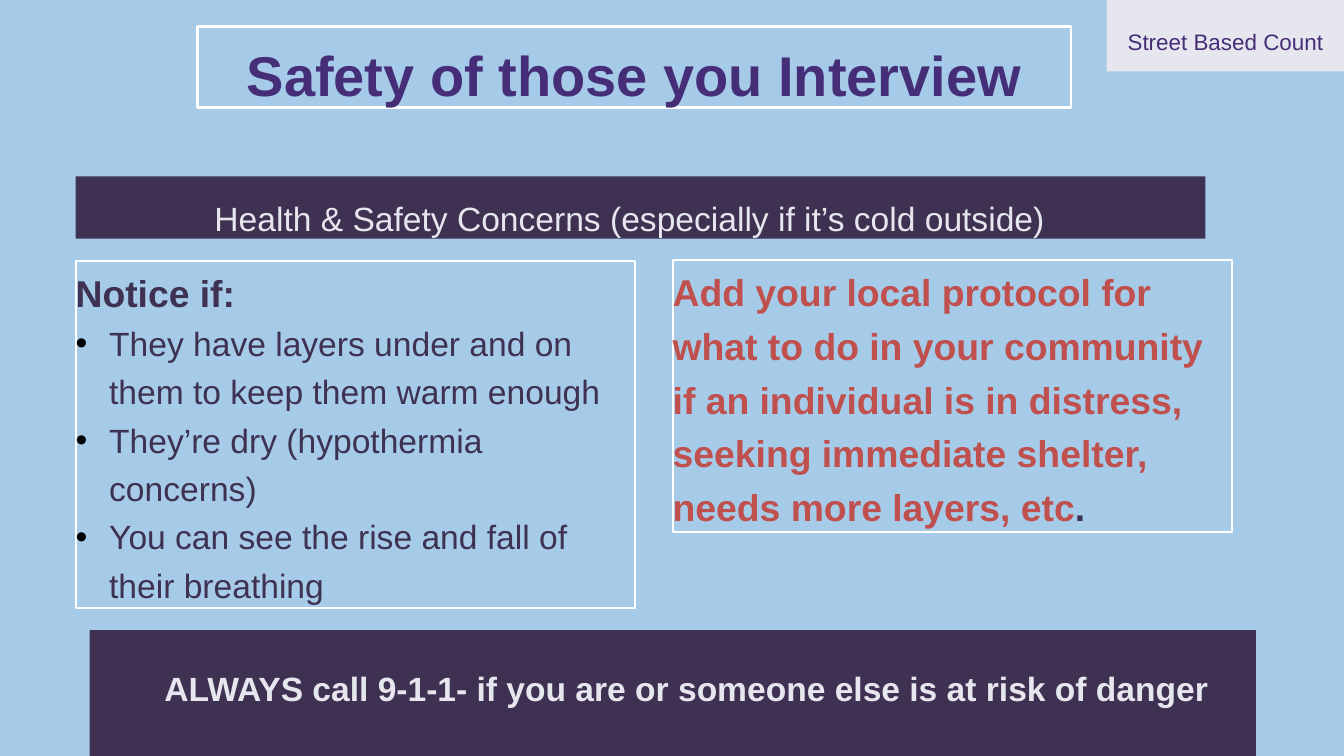
from lxml.etree import SubElement
from pptx import Presentation
from pptx.dml.color import RGBColor
from pptx.enum.shapes import MSO_SHAPE
from pptx.enum.text import MSO_ANCHOR, MSO_AUTO_SIZE, PP_ALIGN
from pptx.oxml.ns import qn
from pptx.util import Pt

PX = 9525  # EMU per px, 96 px to the inch
THEME = {
    "font": "Arial",
    "sky": RGBColor.from_string("A5CBE9"),
    "white": RGBColor.from_string("FFFFFF"),
    "violet": RGBColor.from_string("462D78"),
    "plum": RGBColor.from_string("3F3151"),
    "pale": RGBColor.from_string("E5E6EE"),
    "red": RGBColor.from_string("C0504D"),
    "title": Pt(60),
    "heading": Pt(40),
    "body": Pt(36),
    "tag": Pt(24),
}

presentation = Presentation()
presentation.slide_width = 1920 * PX
presentation.slide_height = 1080 * PX
slide = presentation.slides.add_slide(presentation.slide_layouts[6])
slide.background.fill.solid()
slide.background.fill.fore_color.rgb = THEME["sky"]


def add_box(bounds, fill=None, line_width=None):
    """Add a rectangle, or a text box when it has neither fill nor line."""
    left, top, width, height = (value * PX for value in bounds)
    if fill is None and line_width is None:
        shape = slide.shapes.add_textbox(left, top, width, height)
    else:
        shape = slide.shapes.add_shape(MSO_SHAPE.RECTANGLE, left, top, width, height)
        shape.shadow.inherit = False
        if fill is None:
            shape.fill.background()
            shape.line.color.rgb = THEME["white"]
            shape.line.width = Pt(line_width)
        else:
            shape.fill.solid()
            shape.fill.fore_color.rgb = THEME[fill]
            shape.line.fill.background()
    frame = shape.text_frame
    frame.margin_left = frame.margin_top = frame.margin_right = frame.margin_bottom = 0
    frame.vertical_anchor = MSO_ANCHOR.TOP
    frame.word_wrap = True
    if fill is None:
        frame.auto_size = MSO_AUTO_SIZE.SHAPE_TO_FIT_TEXT
    return frame


def write(paragraph, text, size, color, bold=False, align=PP_ALIGN.CENTER):
    paragraph.alignment = align
    paragraph.line_spacing = 1.2
    paragraph.font.name = THEME["font"]
    paragraph.font.size = THEME[size]
    paragraph.font.bold = bold
    paragraph.font.color.rgb = THEME[color]
    run = paragraph.add_run()
    run.text = text
    return run


# Title
title = add_box((282, 38, 1248, 116), line_width=3)
write(title.paragraphs[0], "Safety of those you Interview", "title", "violet", bold=True)

# Warning signs
signs = add_box((108, 373, 799, 496), line_width=2.25)
write(signs.paragraphs[0], "Notice if:", "heading", "plum", bold=True, align=PP_ALIGN.LEFT)
for sign in (
    "They have layers under and on them to keep them warm enough",
    "They’re dry (hypothermia concerns)",
    "You can see the rise and fall of their breathing",
):
    paragraph = signs.add_paragraph()
    write(paragraph, sign, "body", "plum", align=PP_ALIGN.LEFT)
    paragraph.level = 1
    properties = paragraph._p.get_or_add_pPr()
    properties.set("marL", str(48 * PX))
    properties.set("indent", str(-48 * PX))
    bullet_color = SubElement(properties, qn("a:buClr"))
    SubElement(bullet_color, qn("a:srgbClr"), val="000000")
    SubElement(properties, qn("a:buFont"), typeface=THEME["font"])
    SubElement(properties, qn("a:buChar"), char="•")
    # Bullet elements come before the default run properties
    properties.append(properties.find(qn("a:defRPr")))

# Local protocol
protocol = add_box((961, 372, 799, 388), line_width=2.25)
protocol_text = (
    "Add your local protocol for what to do in your community if an individual "
    "is in distress, seeking immediate shelter, needs more layers, etc"
)
paragraph = protocol.paragraphs[0]
write(paragraph, protocol_text, "heading", "red", bold=True, align=PP_ALIGN.LEFT)
full_stop = paragraph.add_run()
full_stop.text = "."
full_stop.font.color.rgb = THEME["plum"]

# Filled bands with their captions: concerns, emergency call, corner tag
bands = (
    ((108, 252, 1614, 89), "plum", (89, 271, 1621, 70),
     "Health & Safety Concerns (especially if it’s cold outside)", "body", "pale", False),
    ((128, 900, 1666, 224), "plum", (169, 943, 1624, 70),
     "ALWAYS call 9-1-1- if you are or someone else is at risk of danger", "body", "pale", True),
    ((1581, 0, 339, 102), "pale", (1581, 33, 339, 38),
     "Street Based Count", "tag", "violet", False),
)
for band_bounds, fill, caption_bounds, text, size, color, bold in bands:
    add_box(band_bounds, fill=fill)
    caption = add_box(caption_bounds)
    write(caption.paragraphs[0], text, size, color, bold=bold)

presentation.save("out.pptx")
